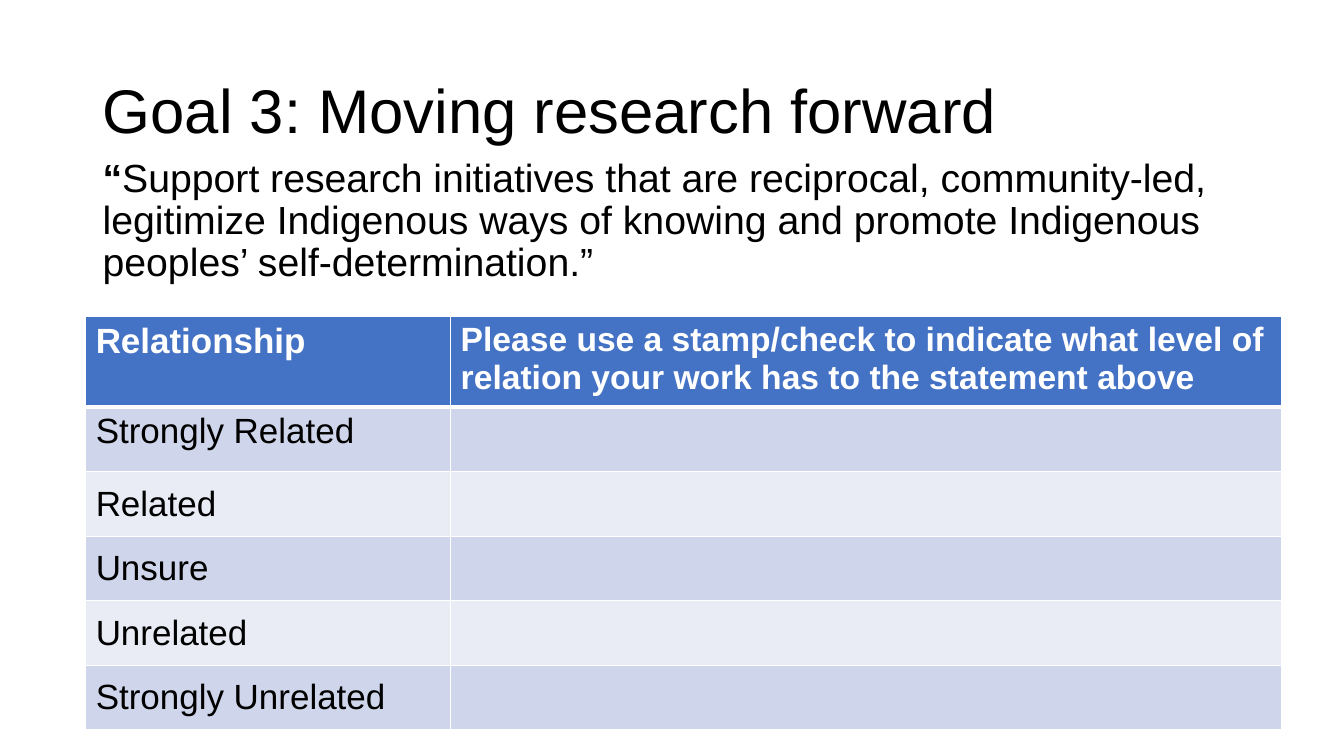
from pptx import Presentation
from pptx.dml.color import RGBColor
from pptx.enum.text import MSO_ANCHOR as ANCHOR
from pptx.oxml import parse_xml
from pptx.oxml.ns import nsdecls
from pptx.util import Inches, Pt

COLORS = {
    "text": "000000",
    "white": "FFFFFF",
    "header": "4472C4",
    "band_dark": "CFD5EA",
    "band_light": "E9EBF5",
}


def add_run(p, text, size, color="text", bold=False):
    r = p.add_run()
    r.text = text
    r.font.name = "Arial"
    r.font.size = Pt(size)
    r.font.bold = bold
    r.font.color.rgb = RGBColor.from_string(COLORS[color])


def set_borders(cell, bottom):
    tcPr = cell._tc.get_or_add_tcPr()
    widths = {"lnL": 1, "lnR": 1, "lnT": 1, "lnB": bottom}
    for i, (side, width) in enumerate(widths.items()):
        tcPr.insert(i, parse_xml(
            f'<a:{side} {nsdecls("a")} w="{Pt(width)}"><a:solidFill>'
            f'<a:srgbClr val="{COLORS["white"]}"/></a:solidFill></a:{side}>'))


prs = Presentation()
prs.slide_width = Inches(13.33)
prs.slide_height = Inches(7.5)
s = prs.slides.add_slide(prs.slide_layouts[6])

title = s.shapes.add_textbox(Inches(0.92), Inches(0.4), Inches(11.5), Inches(1.45))
tf = title.text_frame
tf.word_wrap = True
tf.vertical_anchor = ANCHOR.MIDDLE
p = tf.paragraphs[0]
p.line_spacing = 0.9
add_run(p, "Goal 3: Moving research forward", 44)

quote = s.shapes.add_textbox(Inches(0.92), Inches(1.52), Inches(11.5), Inches(4.76))
tf = quote.text_frame
tf.word_wrap = True
p = tf.paragraphs[0]
p.line_spacing = 0.9
p.space_before = Pt(10)
add_run(p, "“", 28, bold=True)
add_run(p, "Support research initiatives that are reciprocal, community-led, "
           "legitimize Indigenous ways of knowing and promote Indigenous "
           "peoples’ self-determination.”", 28)

levels = ["Strongly Related", "Related", "Unsure", "Unrelated", "Strongly Unrelated"]
table = s.shapes.add_table(len(levels) + 1, 2, Inches(0.85), Inches(3.14),
                           Inches(11.86), Inches(3.98)).table
for col, width in zip(table.columns, (3.62, 8.24)):
    col.width = Inches(width)

for i, row in enumerate(table.rows):
    row.height = Inches(0.64 if i else 0.78)
    fill = "header" if i == 0 else "band_dark" if i % 2 else "band_light"
    for cell in row.cells:
        cell.fill.solid()
        cell.fill.fore_color.rgb = RGBColor.from_string(COLORS[fill])
        set_borders(cell, bottom=1 if i else 3)

headers = [("Relationship", 25),
           ("Please use a stamp/check to indicate what level of relation "
            "your work has to the statement above", 24)]
for j, (text, size) in enumerate(headers):
    add_run(table.cell(0, j).text_frame.paragraphs[0], text, size, "white", bold=True)

for i, level in enumerate(levels, start=1):
    cell = table.cell(i, 0)
    cell.vertical_anchor = ANCHOR.TOP if i == 1 else ANCHOR.MIDDLE
    add_run(cell.text_frame.paragraphs[0], level, 25)

prs.save("out.pptx")
